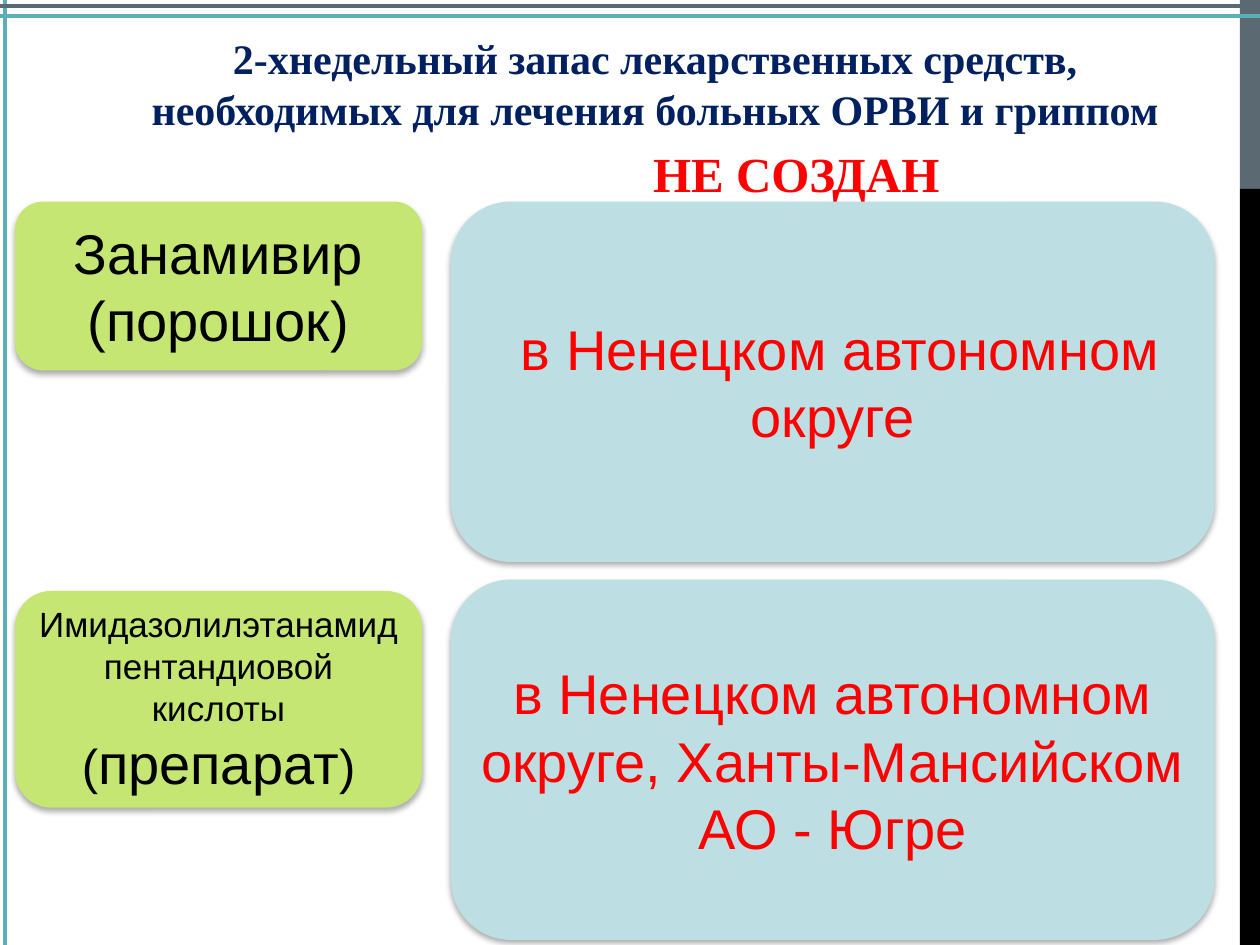
from lxml import etree
from pptx import Presentation
from pptx.dml.color import RGBColor
from pptx.enum.shapes import MSO_CONNECTOR, MSO_SHAPE
from pptx.enum.text import MSO_ANCHOR, PP_ALIGN
from pptx.oxml import parse_xml
from pptx.oxml.ns import nsdecls, qn
from pptx.util import Inches, Pt

RECTANGLE = MSO_SHAPE.RECTANGLE
ROUNDED = MSO_SHAPE.ROUNDED_RECTANGLE
STRAIGHT = MSO_CONNECTOR.STRAIGHT
CENTER = PP_ALIGN.CENTER
MIDDLE = MSO_ANCHOR.MIDDLE

TEAL, SLATE, BLACK, RED, NAVY = "59B0B9", "5B6973", "000000", "FF0000", "002060"
GREEN, PALE_BLUE = "C5E672", "BDDFE3"
SHADOW = (
    f'<a:effectLst {nsdecls("a")}>'
    f'<a:outerShdw blurRad="{Pt(3.5)}" dist="{Pt(2.2)}" dir="5400000" rotWithShape="0">'
    '<a:srgbClr val="000000"><a:alpha val="32000"/></a:srgbClr>'
    '</a:outerShdw></a:effectLst>'
)


def color(value):
    return RGBColor.from_string(value)


def add_run(paragraph, text, font_color, **formats):
    run = paragraph.add_run()
    run.text = text
    run.font.color.rgb = color(font_color)
    for name, value in formats.items():
        setattr(run.font, name, value)


presentation = Presentation()
presentation.slide_width, presentation.slide_height = Inches(10), Inches(7.5)
slide = presentation.slides.add_slide(presentation.slide_layouts[6])

# Side bar
for top, height, fill in [(0, 1.5, SLATE), (1.5, 6, BLACK)]:
    bar = slide.shapes.add_shape(RECTANGLE, Inches(9.84), Inches(top), Inches(0.16), Inches(height))
    bar.shadow.inherit = False
    bar.fill.solid()
    bar.fill.fore_color.rgb = color(fill)
    bar.line.fill.background()

# Border lines
for *ends, line_color in [
    (10, 0.13, 0, 0.13, TEAL),
    (0.04, 0, 0.04, 7.5, TEAL),
    (0, 0.05, 10, 0.05, SLATE),
]:
    border = slide.shapes.add_connector(STRAIGHT, *map(Inches, ends))
    border.line.color.rgb = color(line_color)
    border.line.width = Pt(2.25)
    etree.SubElement(border._element.spPr, qn("a:effectLst"))

# Heading
heading = slide.shapes.add_textbox(Inches(0.75), Inches(0.21), Inches(8.9), Inches(1.22))
heading.text_frame.word_wrap = True
title = heading.text_frame.paragraphs[0]
verdict = heading.text_frame.add_paragraph()
verdict.space_before = Pt(5.6)
verdict._p.get_or_add_pPr().set("marL", str(Inches(2.24)))
for paragraph, text, size, font_color in [
    (title, "2-хнедельный запас лекарственных средств, необходимых для лечения больных ОРВИ и гриппом",
     24, NAVY),
    (verdict, "НЕ СОЗДАН", 28, RED),
]:
    paragraph.alignment = CENTER
    add_run(paragraph, text, font_color, size=Pt(size), name="Times New Roman", bold=True)

# Medicines on the left, regions without a stock on the right
medicine = {"left": 0.12, "width": 3.23, "fill": GREEN, "font_color": BLACK}
region = {"left": 3.58, "width": 6.06, "fill": PALE_BLUE, "font_color": RED}
cards = [
    (medicine, 1.6, 1.34, [("Занамивир (порошок)", 32)]),
    (region, 1.6, 2.86, [(" в Ненецком автономном округе", 32)]),
    (medicine, 4.69, 1.72, [("Имидазолилэтанамид пентандиовой кислоты ", 20),
                            ("(", 28), ("препарат", 32), (")", 28)]),
    (region, 4.6, 2.86, [("в Ненецком автономном округе, Ханты-Мансийском АО - Югре", 32)]),
]
for style, top, height, runs in cards:
    card = slide.shapes.add_shape(
        ROUNDED, Inches(style["left"]), Inches(top), Inches(style["width"]), Inches(height))
    card.fill.solid()
    card.fill.fore_color.rgb = color(style["fill"])
    card.line.fill.background()
    card._element.spPr.append(parse_xml(SHADOW))
    card.text_frame.word_wrap = True
    card.text_frame.vertical_anchor = MIDDLE
    paragraph = card.text_frame.paragraphs[0]
    paragraph.alignment = CENTER
    for text, size in runs:
        add_run(paragraph, text, style["font_color"], size=Pt(size), name="Arial")

presentation.save("out.pptx")
